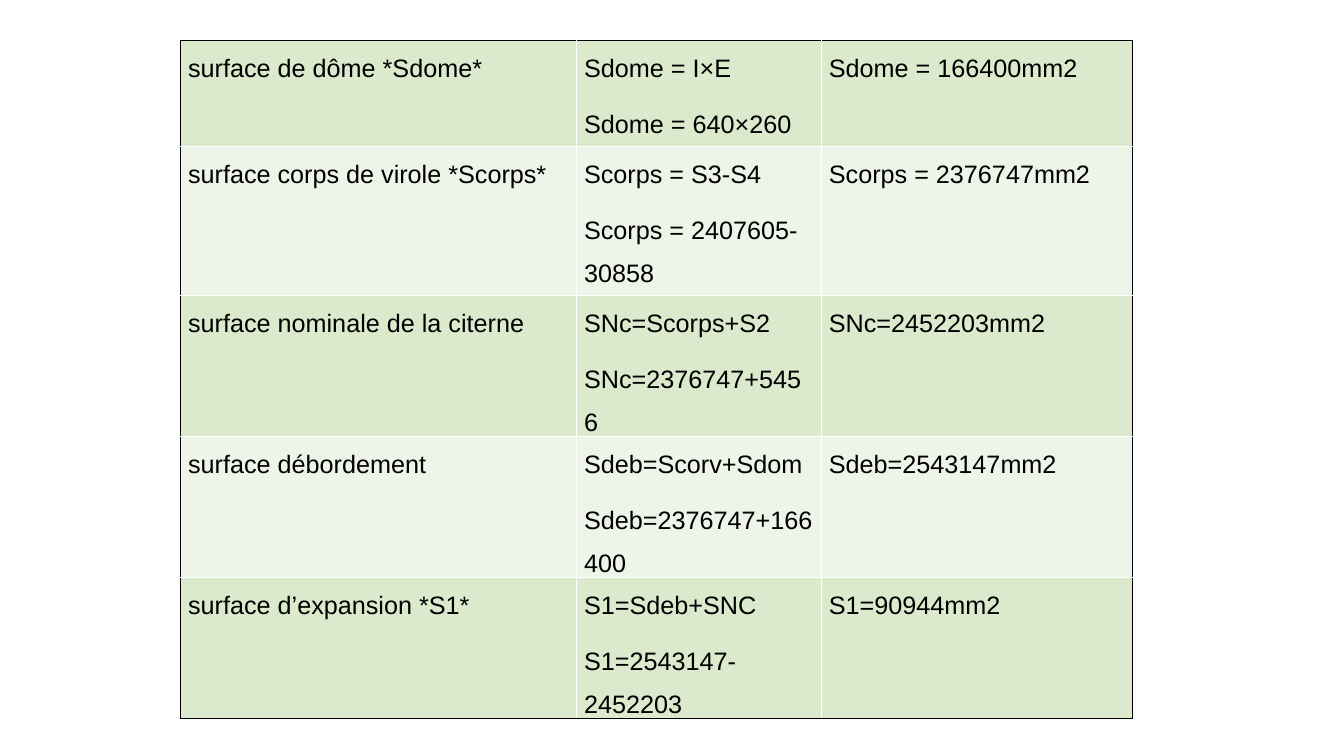
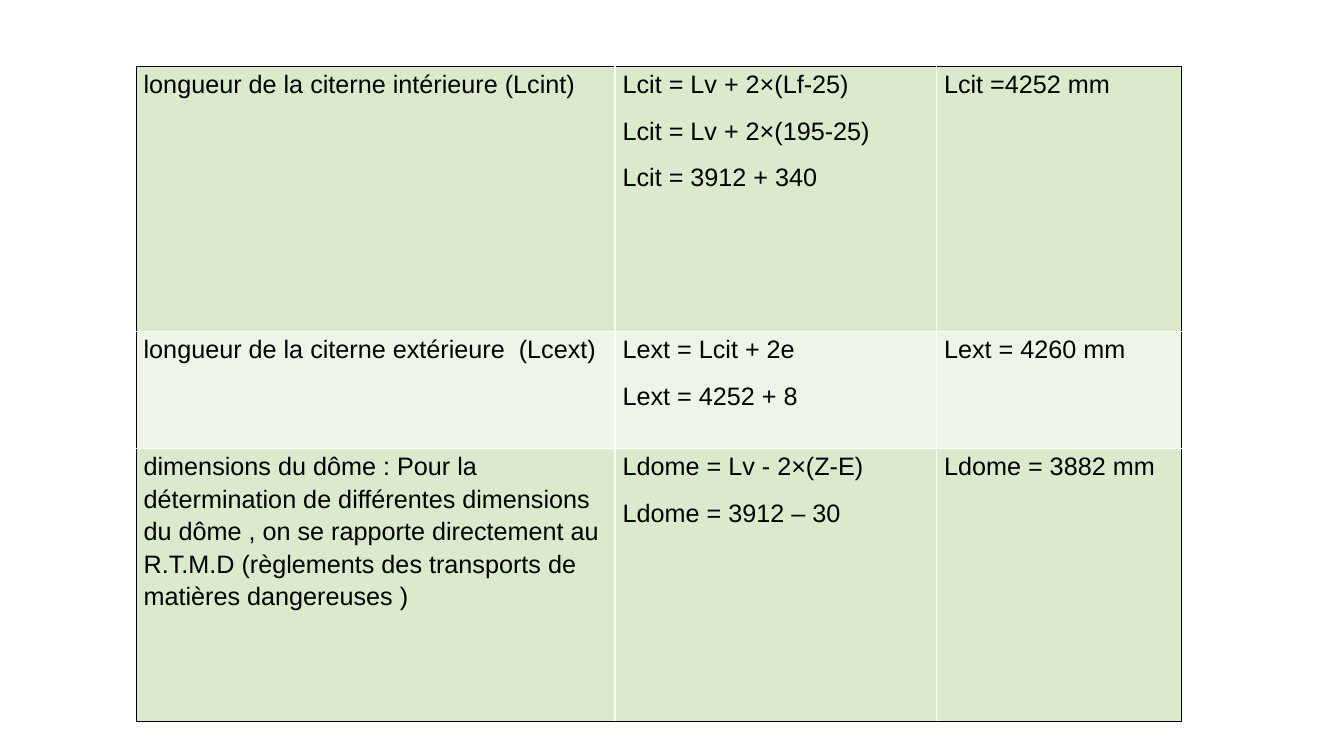
from lxml import etree
from pptx import Presentation
from pptx import util as u
from pptx.dml.color import RGBColor
from pptx.oxml.ns import qn

Cm = u.Cm
BLACK = RGBColor(0x00, 0x00, 0x00)
WHITE = RGBColor(0xFF, 0xFF, 0xFF)
BANDS = (RGBColor(0xDB, 0xE9, 0xCD), RGBColor(0xEE, 0xF4, 0xE8))

# Each row: quantity, formula lines, result
SURFACES = [
    ("surface de dôme *Sdome*", ["Sdome = I×E", "Sdome = 640×260"],
     "Sdome = 166400mm2"),
    ("surface corps de virole *Scorps*",
     ["Scorps = S3-S4", "Scorps = 2407605-30858"], "Scorps = 2376747mm2"),
    ("surface nominale de la citerne",
     ["SNc=Scorps+S2", "SNc=2376747+5456"], "SNc=2452203mm2"),
    ("surface débordement",
     ["Sdeb=Scorv+Sdom", "Sdeb=2376747+166400"], "Sdeb=2543147mm2"),
    ("surface d’expansion *S1*",
     ["S1=Sdeb+SNC", "S1=2543147-2452203"], "S1=90944mm2"),
]

LENGTHS = [
    ("longueur de la citerne intérieure (Lcint)",
     ["Lcit = Lv + 2×(Lf-25)", "Lcit = Lv + 2×(195-25)", "Lcit = 3912 + 340"],
     "Lcit =4252 mm"),
    ("longueur de la citerne extérieure  (Lcext)",
     ["Lext = Lcit + 2e", "Lext = 4252 + 8"], "Lext = 4260 mm"),
    ("dimensions du dôme : Pour la détermination de différentes dimensions "
     "du dôme , on se rapporte directement au R.T.M.D (règlements des "
     "transports de matières dangereuses )",
     ["Ldome = Lv - 2×(Z-E)", "Ldome = 3912 – 30"], "Ldome = 3882 mm"),
]


class Deck:
    """Shared style and the current slide."""
    font, size = "Arial", u.Pt(18)
    space_after = u.Pt(10)
    inset = Cm(0.19)
    border = u.Pt(1)

    def __init__(self):
        self.prs = Presentation()
        self.prs.slide_width, self.prs.slide_height = Cm(33.87), Cm(19.05)
        self.s = None

    def new_slide(self):
        self.s = self.prs.slides.add_slide(self.prs.slide_layouts[6])

    def table(self, left, top, widths, heights, rows, line_spacing):
        frame = self.s.shapes.add_table(
            len(rows), len(widths), Cm(left), Cm(top),
            Cm(sum(widths)), Cm(sum(heights)))
        tbl = frame.table
        tbl.first_row = tbl.horz_banding = False
        for col, width in zip(tbl.columns, widths):
            col.width = Cm(width)
        for row, height in zip(tbl.rows, heights):
            row.height = Cm(height)

        last_row, last_col = len(rows) - 1, len(widths) - 1
        for i, (quantity, formulas, result) in enumerate(rows):
            for j, lines in enumerate(([quantity], formulas, [result])):
                cell = tbl.cell(i, j)
                # Black on the outer edge, white inside
                self.borders(cell, L=j == 0, R=j == last_col,
                             T=i == 0, B=i == last_row)
                cell.fill.solid()
                cell.fill.fore_color.rgb = BANDS[i % 2]
                self.cell_text(cell, lines, line_spacing)

    def borders(self, cell, **outer):
        tc_pr = cell._tc.get_or_add_tcPr()
        for side, is_outer in outer.items():
            ln = etree.SubElement(tc_pr, qn(f"a:ln{side}"), w=str(self.border))
            fill = etree.SubElement(ln, qn("a:solidFill"))
            etree.SubElement(fill, qn("a:srgbClr"),
                             val=str(BLACK if is_outer else WHITE))

    def cell_text(self, cell, lines, line_spacing):
        cell.margin_left = cell.margin_right = self.inset
        cell.margin_top = cell.margin_bottom = 0
        tf = cell.text_frame
        for k, line in enumerate(lines):
            p = tf.add_paragraph() if k else tf.paragraphs[0]
            p.line_spacing = line_spacing
            p.space_after = self.space_after
            r = p.add_run()
            r.text = line
            r.font.name, r.font.size = self.font, self.size
            r.font.color.rgb = BLACK


def main():
    deck = Deck()

    # Surfaces of the tank
    deck.new_slide()
    deck.table(4.55, 1.02, [9.98, 6.17, 7.85], [2.67, 3.76] + [3.55] * 3,
               SURFACES, 1.5)

    # Lengths and dome dimensions
    deck.new_slide()
    deck.table(3.43, 1.68, [12.07, 8.1, 6.17], [6.68, 2.95, 6.88],
               LENGTHS, 1.15)

    deck.prs.save("out.pptx")


if __name__ == "__main__":
    main()
